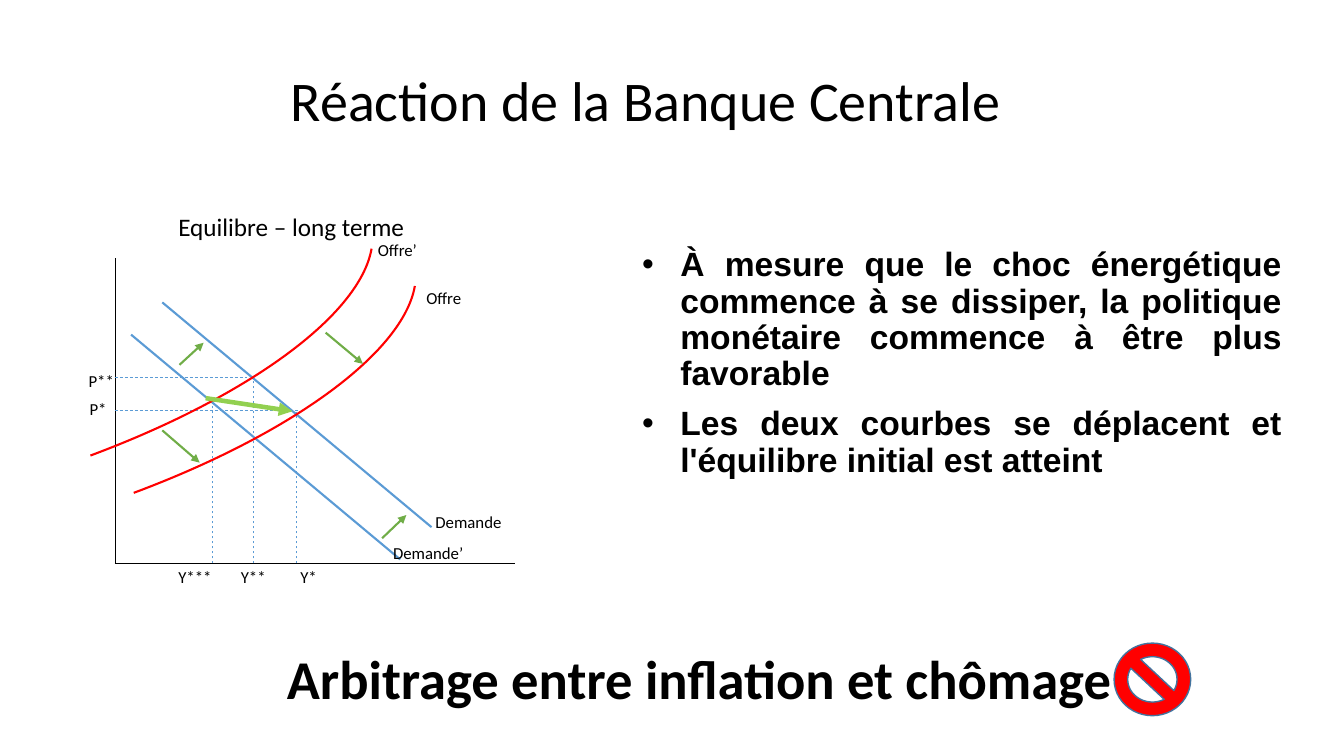
from dataclasses import dataclass

from lxml.etree import SubElement
from pptx import Presentation
from pptx.dml.color import RGBColor
from pptx.enum.dml import MSO_LINE
from pptx.enum.shapes import MSO_CONNECTOR, MSO_SHAPE
from pptx.enum.text import MSO_ANCHOR as Anchor, PP_ALIGN as Align
from pptx.oxml.ns import qn
from pptx.util import Emu, Pt

PX = 9144


@dataclass(frozen=True)
class Theme:
    heading_font: str = "Calibri"
    body_font: str = "Arial"
    ink: str = "000000"
    demand: str = "5B9BD5"
    supply: str = "FF0000"
    shift: str = "70AD47"
    move: str = "92D050"
    sign_edge: str = "43739E"
    title_size: int = 40
    closing_size: int = 39
    body_size: int = 24
    caption_size: int = 18
    label_size: int = 12
    line_spacing: float = 0.9
    thin: float = 0.5
    medium: float = 1.5
    thick: float = 3.25


THEME = Theme()


def px(value):
    return Emu(value * PX)


def color(code):
    return RGBColor.from_string(code)


def add_run(paragraph, text, size, font=THEME.heading_font, bold=False):
    run = paragraph.add_run()
    run.text = text
    run.font.name = font
    run.font.size = Pt(size)
    run.font.bold = bold
    run.font.color.rgb = color(THEME.ink)


def add_frame(slide, left, top, width, height, anchor=Anchor.TOP):
    shape = slide.shapes.add_textbox(px(left), px(top), px(width), px(height))
    frame = shape.text_frame
    frame.word_wrap = True
    frame.vertical_anchor = anchor
    return frame


def add_heading(slide, text, left, top, size, bold=False):
    frame = add_frame(slide, left, top, 1187, 113, Anchor.BOTTOM)
    paragraph = frame.paragraphs[0]
    paragraph.alignment = Align.CENTER
    paragraph.line_spacing = THEME.line_spacing
    add_run(paragraph, text, size, bold=bold)


def add_label(slide, text, left, top, width=134, height=30, size=THEME.label_size):
    frame = add_frame(slide, left, top, width, height)
    add_run(frame.paragraphs[0], text, size)


def add_bullets(slide, texts, left, top, width, height):
    frame = add_frame(slide, left, top, width, height)
    for index, text in enumerate(texts):
        paragraph = frame.add_paragraph() if index else frame.paragraphs[0]
        paragraph.alignment = Align.JUSTIFY
        paragraph.line_spacing = THEME.line_spacing
        paragraph.space_before = Pt(0)
        paragraph.space_after = Pt(10)
        add_run(paragraph, text, THEME.body_size, THEME.body_font, True)
        properties = paragraph._p.get_or_add_pPr()
        properties.set("marL", str(px(38)))
        properties.set("indent", str(px(-38)))
        SubElement(properties, qn("a:buFont"), typeface=THEME.body_font)
        SubElement(properties, qn("a:buChar"), char="•")


def add_line(slide, start, end, code, width, dashed=False, arrow=False):
    connector = slide.shapes.add_connector(
        MSO_CONNECTOR.STRAIGHT, *map(px, start), *map(px, end)
    )
    line = connector.line
    line.color.rgb = color(code)
    line.width = Pt(width)
    if dashed:
        line.dash_style = MSO_LINE.DASH
    if arrow:
        SubElement(line._get_or_add_ln(), qn("a:tailEnd"), type="triangle")
    SubElement(connector._element.spPr, qn("a:effectLst"))


def add_supply_curve(slide, left, top):
    arc = slide.shapes.add_shape(MSO_SHAPE.ARC, px(left), px(top), px(301), px(852))
    arc.rotation = 74.2
    arc.adjustments[0] = 164.05
    arc.adjustments[1] = 196.09
    arc.shadow.inherit = False
    arc.fill.background()
    arc.line.color.rgb = color(THEME.supply)
    arc.line.width = Pt(THEME.medium)


def add_no_sign(slide, left, top, width, height):
    sign = slide.shapes.add_shape(
        MSO_SHAPE.NO_SYMBOL, px(left), px(top), px(width), px(height)
    )
    sign.shadow.inherit = False
    sign.fill.solid()
    sign.fill.fore_color.rgb = color(THEME.supply)
    sign.line.color.rgb = color(THEME.sign_edge)
    sign.line.width = Pt(1)


def add_diagram(slide):
    axis_x, axis_y = 114, 559
    origin = (axis_x, axis_y)
    for end in ((axis_x, 256), (511, axis_y)):
        add_line(slide, origin, end, THEME.ink, THEME.thin)
    for left, top in ((161, 300), (130, 332)):
        add_line(slide, (left, top), (left + 267, top + 223), THEME.demand, THEME.medium)
    for price, right in ((407, 296), (374, 245)):
        add_line(slide, (axis_x, price), (right, price), THEME.demand, THEME.thin, dashed=True)
    for output, top in ((294, 409), (251, 374), (211, 394)):
        add_line(slide, (output, axis_y), (output, top), THEME.demand, THEME.thin, dashed=True)
    for left, top in ((-150, -52), (-193, -89)):
        add_supply_curve(slide, left, top)
    add_line(slide, (204, 395), (290, 408), THEME.move, THEME.thick, arrow=True)
    for start, end in (
        ((323, 330), (360, 361)),
        ((161, 427), (198, 459)),
        ((178, 362), (202, 340)),
        ((379, 534), (403, 511)),
    ):
        add_line(slide, start, end, THEME.shift, THEME.medium, arrow=True)
    for text, left, top in (
        ("Demande", 422, 503),
        ("Demande’", 380, 534),
        ("Offre", 413, 281),
        ("Offre’", 365, 233),
        ("P*", 79, 391),
        ("P**", 78, 363),
        ("Y***", 167, 557),
        ("Y**", 229, 557),
        ("Y*", 288, 557),
    ):
        add_label(slide, text, left, top)
    add_label(slide, "Equilibre – long terme", 167, 205, 313, 40, THEME.caption_size)


def main():
    presentation = Presentation()
    presentation.slide_width = px(1333)
    presentation.slide_height = px(750)
    slide = presentation.slides.add_slide(presentation.slide_layouts[6])
    add_heading(slide, "Réaction de la Banque Centrale", 47, 25, THEME.title_size)
    add_bullets(
        slide,
        (
            "À mesure que le choc énergétique commence à se dissiper, "
            "la politique monétaire commence à être plus favorable",
            "Les deux courbes se déplacent et l'équilibre initial est atteint",
        ),
        627, 241, 654, 377,
    )
    add_diagram(slide)
    add_heading(
        slide, "Arbitrage entre inflation et chômage", 100, 598, THEME.closing_size, True
    )
    add_no_sign(slide, 1105, 638, 76, 72)
    presentation.save("out.pptx")


if __name__ == "__main__":
    main()
